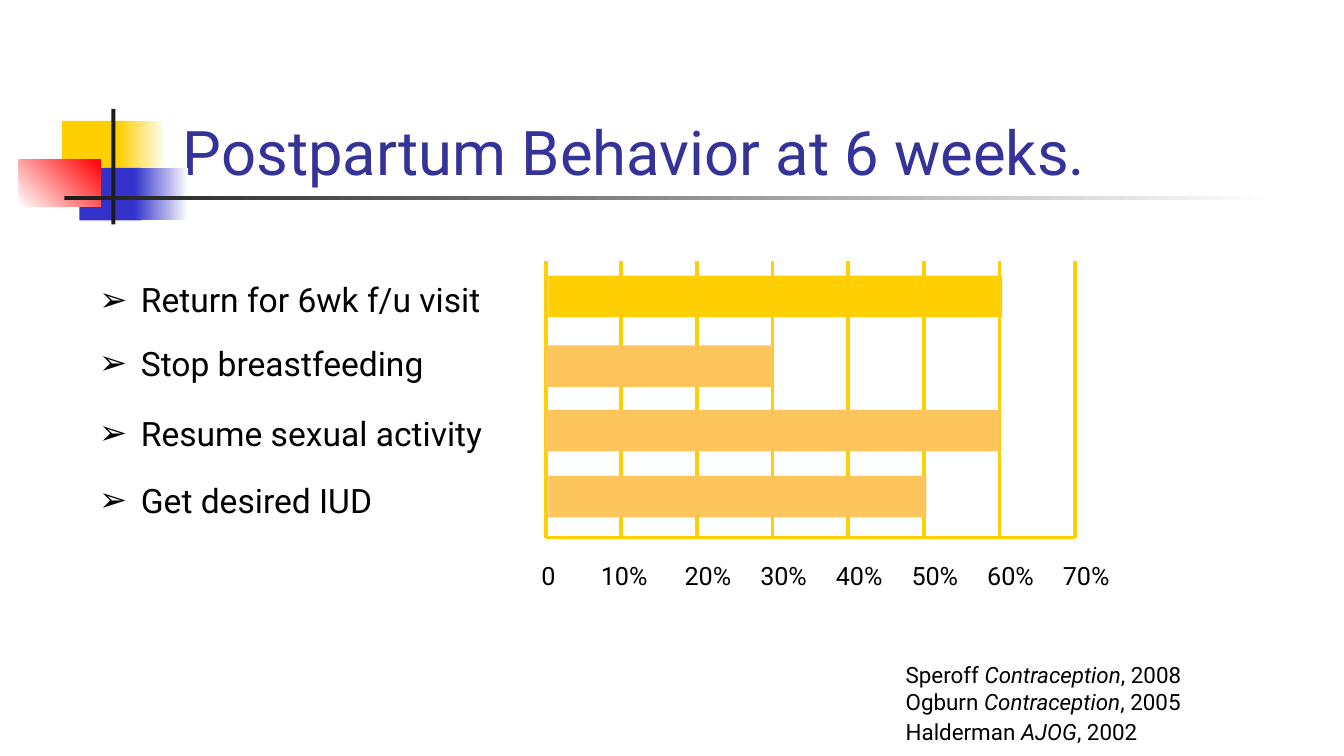
from lxml import etree
from pptx import Presentation
from pptx.dml.color import RGBColor
from pptx.enum.shapes import MSO_CONNECTOR, MSO_SHAPE
from pptx.enum.text import MSO_ANCHOR, PP_ALIGN
from pptx.oxml.ns import qn
from pptx.util import Inches, Pt

RECT = MSO_SHAPE.RECTANGLE
LINE = MSO_CONNECTOR.STRAIGHT
LEFT = PP_ALIGN.LEFT
BOTTOM = MSO_ANCHOR.BOTTOM

GOLD = RGBColor(0xFF, 0xCF, 0x01)
PEACH = RGBColor(0xFE, 0xC5, 0x5C)
BLUE = RGBColor(0x33, 0x33, 0xCC)
NAVY = RGBColor(0x33, 0x33, 0x99)
RED = RGBColor(0xFF, 0x00, 0x00)
DARK = RGBColor(0x1C, 0x1C, 0x1C)
BLACK = RGBColor(0, 0, 0)
WHITE = RGBColor(0xFF, 0xFF, 0xFF)

FONT = "Roboto"
WIDE = Inches(10)
HIGH = WIDE * 9 // 16
AXIS, TOP, BASE = 4.06, 1.94, 4.0
COL = (8 - AXIS) / 7
TICKS = [
    ("0", 0.06, 0.31, 0.33),
    ("10%", -0.06, 0.56, 0.56),
    ("20%", 0, 0.56, 0.56),
    ("30%", 0, 0.56, 0.56),
    ("40%", 0, 0.56, 0.56),
    ("50%", 0, 0.56, 0.56),
    ("60%", 0, 0.56, 0.56),
    ("70%", 0, 0.62, 0.33),
]
BARS = [
    ("Return for 6wk f/u visit", 3.45, 2.03, 60, GOLD, 4.08, 2.05),
    ("Stop breastfeeding", 2.94, 2.5, 30, PEACH, 4.06, 2.57),
    ("Resume sexual activity", 3.3, 3.02, 60, PEACH, 4.06, 3.05),
    ("Get desired IUD", 2.94, 3.52, 50, PEACH, 4.08, 3.54),
]
CITES = [
    ("Speroff ", "Contraception", ", 2008", 0),
    ("Ogburn ", "Contraception", ", 2005", 0),
    ("Halderman ", "AJOG", ", 2002", 2),
]


def box(x, y, w, h):
    return [Inches(v) for v in (x, y, w, h)]


def write(para, text, size=18, color=BLACK, italic=False):
    run = para.add_run()
    run.text = text
    font = run.font
    font.name, font.size, font.italic = FONT, Pt(size), italic
    font.color.rgb = color


def frame(slide, *area):
    text = slide.shapes.add_textbox(*box(*area)).text_frame
    text.word_wrap = True
    return text


def block(slide, area, color, end=None, angle=0):
    shape = slide.shapes.add_shape(RECT, *box(*area))
    shape.shadow.inherit = False
    shape.line.fill.background()
    fill = shape.fill
    if end is None:
        fill.solid()
        fill.fore_color.rgb = color
        return
    fill.gradient()
    fill.gradient_angle = angle
    for stop, tone, place in zip(fill.gradient_stops, (color, end), (0, 1)):
        stop.color.rgb = tone
        stop.position = place


def rule(slide, *ends):
    line = slide.shapes.add_connector(LINE, *box(*ends))
    line.line.color.rgb = GOLD
    line.line.width = Pt(2)
    etree.SubElement(line._element.spPr, qn("a:effectLst"))


def bullet(para):
    props = para._p.get_or_add_pPr()
    props.set("marL", str(Inches(0.31)))
    props.set("indent", str(Inches(-0.31)))
    etree.SubElement(props, qn("a:buFont")).set("typeface", FONT)
    etree.SubElement(props, qn("a:buChar")).set("char", "➢")


def motif(slide):
    block(slide, (0.46, 0.9, 0.48, 0.39), GOLD)
    block(slide, (0.88, 0.9, 0.36, 0.39), GOLD, WHITE)
    block(slide, (0.59, 1.25, 0.46, 0.39), BLUE)
    block(slide, (1, 1.25, 0.4, 0.39), BLUE, WHITE)
    block(slide, (0.14, 1.19, 0.61, 0.35), WHITE, RED, 45)
    block(slide, (0.83, 0.81, 0.03, 0.86), DARK)
    block(slide, (0.48, 1.46, 9, 0.03), DARK, WHITE)


def head(slide, text):
    title = slide.shapes.title
    title.left, title.top, title.width, title.height = box(1.26, 0.51, 8.52, 0.94)
    title.text_frame.vertical_anchor = BOTTOM
    para = title.text_frame.paragraphs[0]
    para.alignment = LEFT
    write(para, text, size=33, color=NAVY)


def grid(slide):
    rule(slide, AXIS, BASE, 8, BASE)
    for i, (tick, shift, wide, high) in enumerate(TICKS):
        x = AXIS + i * COL
        rule(slide, x, BASE, x, TOP)
        text = frame(slide, x - 0.19 + shift, 4.12, wide, high)
        write(text.paragraphs[0], tick, size=13.5)


def bars(slide):
    for name, wide, top, share, color, x, y in BARS:
        para = frame(slide, 0.64, top, wide, 0.4).paragraphs[0]
        bullet(para)
        write(para, name)
        block(slide, (x, y, share / 10 * COL, 0.31), color)


def cites(slide):
    text = frame(slide, 6.64, 4.87, 3.19, 0.73)
    for i, (name, work, year, gap) in enumerate(CITES):
        para = text.add_paragraph() if i else text.paragraphs[0]
        para.space_before = Pt(gap)
        write(para, name, size=12)
        write(para, work, size=12, italic=True)
        write(para, year, size=12)


def main():
    deck = Presentation()
    deck.slide_width, deck.slide_height = WIDE, HIGH
    slide = deck.slides.add_slide(deck.slide_layouts[5])
    motif(slide)
    head(slide, "Postpartum Behavior at 6 weeks.")
    grid(slide)
    bars(slide)
    cites(slide)
    deck.save("out.pptx")


if __name__ == "__main__":
    main()
